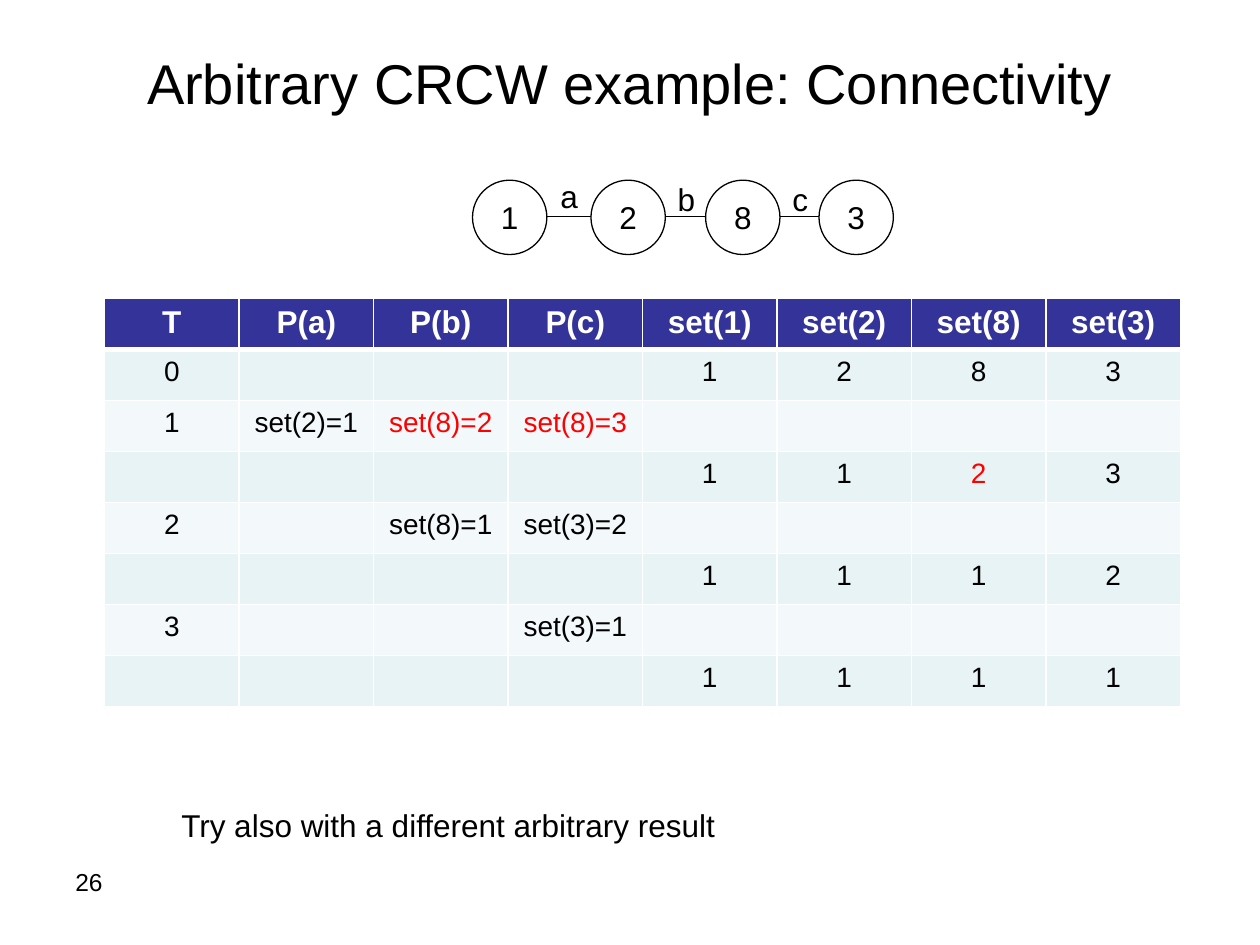
"""Build the slide on connectivity with an arbitrary CRCW machine."""
from dataclasses import dataclass

from lxml import etree
from pptx import Presentation, util as u
from pptx.dml.color import RGBColor
from pptx.enum import shapes, text
from pptx.oxml.ns import qn

PX = 9144
FONT = "Arial"
BLACK, WHITE, RED = "000000", "FFFFFF", "FF0000"
NAVY, TEAL, PALE = "333399", "E7F3F4", "F3F9FA"
LEFT, MID = text.PP_ALIGN.LEFT, text.PP_ALIGN.CENTER
SIZE, TOP = 59, 143
HEAD = ["T", "P(a)", "P(b)", "P(c)", "set(1)", "set(2)", "set(8)", "set(3)"]
ROWS = [
    ["0", "", "", "", "1", "2", "8", "3"],
    ["1", "set(2)=1", "set(8)=2", "set(8)=3", "", "", "", ""],
    ["", "", "", "", "1", "1", "2", "3"],
    ["2", "", "set(8)=1", "set(3)=2", "", "", "", ""],
    ["", "", "", "", "1", "1", "1", "2"],
    ["3", "", "", "set(3)=1", "", "", "", ""],
    ["", "", "", "", "1", "1", "1", "1"],
]
HOT = {(2, 2), (2, 3), (3, 6)}


@dataclass
class Label:
    words: str
    x: int
    y: int
    w: int
    h: int
    size: int = 18
    align: text.PP_ALIGN = LEFT
    wrap: bool = False


@dataclass
class Node:
    name: str
    x: int


LABELS = [
    Label("Arbitrary CRCW example: Connectivity", 50, 30, 900, 70, 32, MID, True),
    Label("26", 50, 683, 233, 52, 14, LEFT, True),
    Label("a", 435, 136, 34, 40),
    Label("b", 528, 138, 34, 40),
    Label("c", 619, 138, 33, 40),
    Label("Try also with a different arbitrary result", 134, 635, 448, 40),
]
NODES = [Node("1", 375), Node("2", 469), Node("8", 560), Node("3", 650)]


def px(*vals: int) -> list[u.Emu]:
    """Turn pixels into EMU."""
    return [u.Emu(val * PX) for val in vals]


def tint(code: str) -> RGBColor:
    """Turn a hex string into a colour."""
    return RGBColor.from_string(code)


def write(frame, words: str, size: int, align, code: str = BLACK, bold: bool = False) -> None:
    """Write one run into the first paragraph of a frame."""
    para = frame.paragraphs[0]
    para.alignment = align
    run = para.add_run()
    run.text = words
    run.font.name, run.font.size, run.font.bold = FONT, u.Pt(size), bold
    run.font.color.rgb = tint(code)


def stroke(line) -> None:
    """Give a line its thin black look."""
    line.color.rgb = tint(BLACK)
    line.width = u.Pt(0.75)


def draw_label(slide, item: Label) -> None:
    """Draw a text box."""
    frame = slide.shapes.add_textbox(*px(item.x, item.y, item.w, item.h)).text_frame
    frame.word_wrap = item.wrap
    if item.size == 32:
        frame.vertical_anchor = text.MSO_ANCHOR.MIDDLE
    write(frame, item.words, item.size, item.align)


def draw_node(slide, node: Node) -> None:
    """Draw a graph node."""
    oval = slide.shapes.add_shape(
        shapes.MSO_SHAPE.OVAL, *px(node.x, TOP, SIZE, SIZE))
    oval.shadow.inherit = False
    oval.fill.background()
    stroke(oval.line)
    oval.text_frame.vertical_anchor = text.MSO_ANCHOR.MIDDLE
    write(oval.text_frame, node.name, 18, MID)


def draw_edge(slide, start: Node, end: Node) -> None:
    """Draw the edge between two nodes."""
    y = TOP + SIZE // 2
    edge = slide.shapes.add_connector(
        shapes.MSO_CONNECTOR.STRAIGHT, *px(start.x + SIZE, y, end.x, y))
    stroke(edge.line)
    etree.SubElement(edge.element.spPr, qn("a:effectLst"))


def rule(cell, side: str, width: float) -> None:
    """Add a white border to one side of a cell."""
    props = cell._tc.get_or_add_tcPr()
    line = etree.SubElement(props, qn(f"a:ln{side}"), w=str(u.Pt(width)))
    fill = etree.SubElement(line, qn("a:solidFill"))
    etree.SubElement(fill, qn("a:srgbClr"), val=WHITE)


def draw_cell(cell, words: str, row: int, col: int) -> None:
    """Fill, border and letter one table cell."""
    wide = {(0, "B"), (1, "T")}
    for side in "LRTB":
        rule(cell, side, 3 if (row, side) in wide else 1)
    cell.fill.solid()
    cell.fill.fore_color.rgb = tint(NAVY if row == 0 else TEAL if row % 2 else PALE)
    if not words:
        return
    if row == 0:
        write(cell.text_frame, words, 18, MID, WHITE, True)
    else:
        write(cell.text_frame, words, 16, MID, RED if (row, col) in HOT else BLACK)


def draw_table(slide) -> None:
    """Draw the trace of the algorithm."""
    grid = [HEAD, *ROWS]
    table = slide.shapes.add_table(
        len(grid), len(HEAD), *px(83, 237, 854, 324)).table
    for row, line in enumerate(grid):
        for col, words in enumerate(line):
            draw_cell(table.cell(row, col), words, row, col)


def main() -> None:
    """Build and save the slide."""
    deck = Presentation()
    deck.slide_width, deck.slide_height = px(1000, 750)
    slide = deck.slides.add_slide(deck.slide_layouts[6])
    for node in NODES:
        draw_node(slide, node)
    for start, end in zip(NODES, NODES[1:]):
        draw_edge(slide, start, end)
    for item in LABELS:
        draw_label(slide, item)
    draw_table(slide)
    deck.save("out.pptx")


if __name__ == "__main__":
    main()
